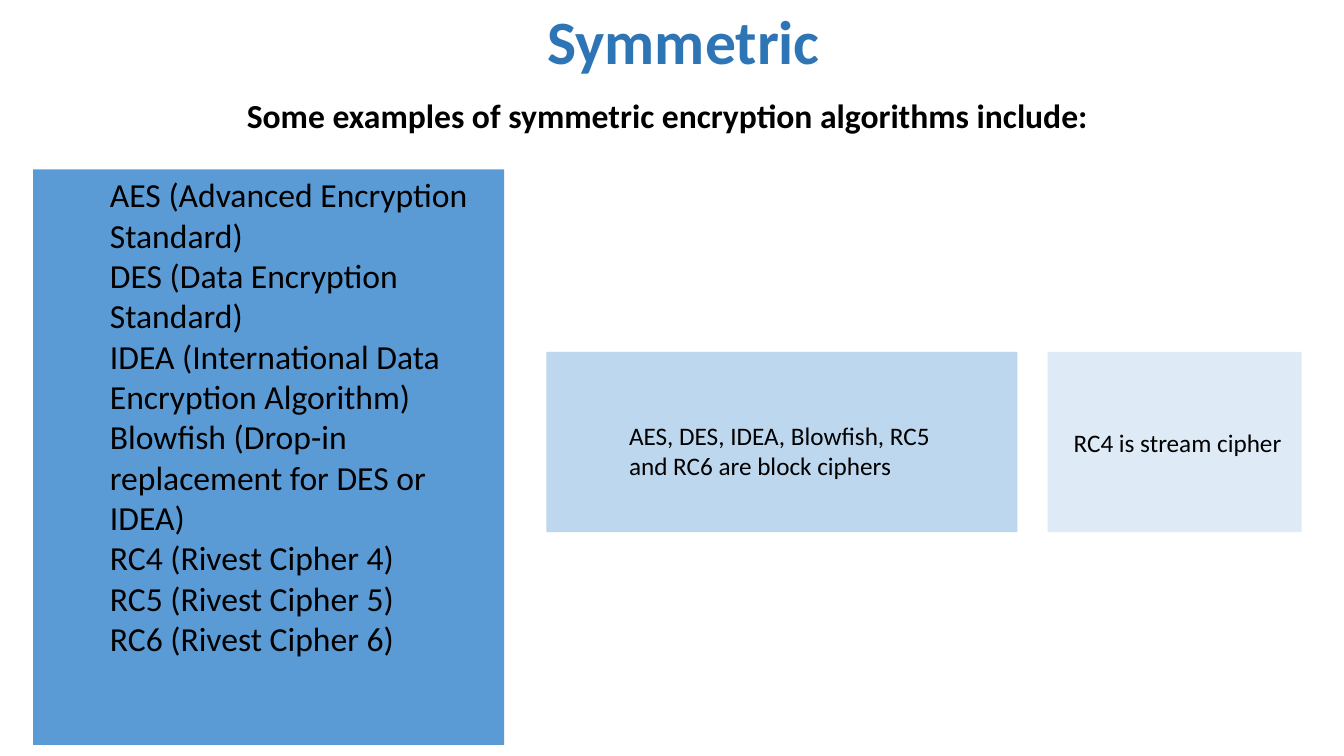
import pptx
import pptx.util
import pptx.dml.color
import pptx.enum.shapes
import pptx.enum.text
import pptx.oxml
import pptx.oxml.ns

Inches = pptx.util.Inches
Anchor = pptx.enum.text.MSO_ANCHOR
AutoSize = pptx.enum.text.MSO_AUTO_SIZE

COLORS = {
    "title": "2E75B6",
    "text": "000000",
    "list": "5B9BD5",
    "block": "BDD7EE",
    "stream": "DEEBF7",
}
TITLE = "Symmetric"
ALGORITHMS = [
    "AES (Advanced Encryption Standard)",
    "DES (Data Encryption Standard)",
    "IDEA (International Data Encryption Algorithm)",
    "Blowfish (Drop-in replacement for DES or IDEA)",
    "RC4 (Rivest Cipher 4)",
    "RC5 (Rivest Cipher 5)",
    "RC6 (Rivest Cipher 6)",
]
PANELS = [
    ("list", (0.33, 1.68, 4.67, 5.71)),
    ("block", (5.42, 3.49, 4.67, 1.79)),
    ("stream", (10.39, 3.49, 2.52, 1.79)),
]
LABELS = [
    ("AES, DES, IDEA, Blowfish, RC5 and RC6 are block ciphers",
     (6.14, 4.12, 3.38, 1.01), {"size": 18}),
    ("RC4 is stream cipher",
     (10.55, 4.19, 2.29, 0.4), {"size": 18, "wrap": False}),
    ("Some examples of symmetric encryption algorithms include:",
     (2.35, 0.89, 8.63, 0.5), {"size": 24, "bold": True, "wrap": False}),
]


def rgb(name):
    return pptx.dml.color.RGBColor.from_string(COLORS[name])


def place(shape, area):
    shape.left, shape.top, shape.width, shape.height = map(Inches, area)


def write(shape, lines, size=24, color="text", bold=False, wrap=True,
          anchor=Anchor.TOP, fit=AutoSize.SHAPE_TO_FIT_TEXT,
          spacing=1.0, level=0, indent=None):
    frame = shape.text_frame
    frame.word_wrap = wrap
    frame.auto_size = fit
    frame.vertical_anchor = anchor
    for index, line in enumerate(lines):
        para = frame.paragraphs[0] if index == 0 else frame.add_paragraph()
        para.level = level
        para.alignment = pptx.enum.text.PP_ALIGN.LEFT
        para.line_spacing = spacing
        para.space_before = pptx.util.Pt(0)
        if indent is not None:
            properties = para._p.get_or_add_pPr()
            properties.set("marL", str(Inches(indent)))
            properties.set("indent", "0")
            properties.append(pptx.oxml.parse_xml(
                f"<a:buNone {pptx.oxml.ns.nsdecls('a')}/>"))
        span = para.add_run()
        span.text = line
        span.font.name = "Calibri"
        span.font.size = pptx.util.Pt(size)
        span.font.bold = bold
        span.font.color.rgb = rgb(color)


def main():
    deck = pptx.Presentation()
    deck.slide_width, deck.slide_height = Inches(13.33), Inches(7.5)
    page = deck.slides.add_slide(deck.slide_layouts[1])

    title = page.shapes.title
    place(title, (5.33, -0.28, 6.32, 1.45))
    write(title, [TITLE], size=44, color="title", bold=True,
          anchor=Anchor.MIDDLE, fit=AutoSize.NONE, spacing=0.9)

    body = page.placeholders[1]
    place(body, (0.49, 1.68, 4.34, 5.25))
    write(body, ALGORITHMS, level=1, indent=0.5)

    for color, area in PANELS:
        panel = page.shapes.add_shape(
            pptx.enum.shapes.MSO_SHAPE.RECTANGLE, *map(Inches, area))
        panel.shadow.inherit = False
        panel.fill.solid()
        panel.fill.fore_color.rgb = rgb(color)
        panel.line.fill.background()
        body.element.addprevious(panel.element)

    for text, area, style in LABELS:
        box = page.shapes.add_textbox(*map(Inches, area))
        write(box, [text], **style)

    deck.save("out.pptx")


if __name__ == "__main__":
    main()
